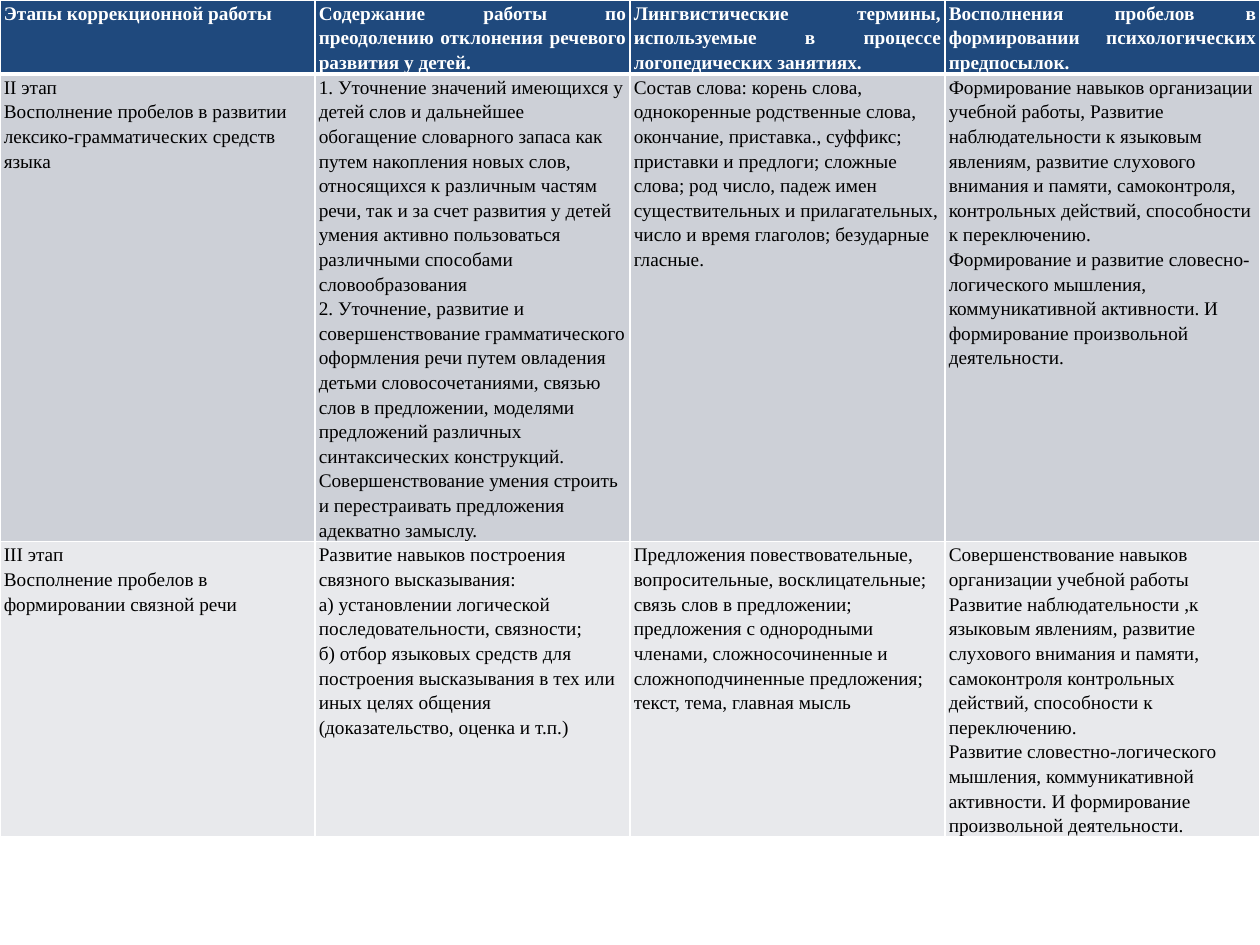
from dataclasses import dataclass

from lxml import etree
from pptx import Presentation
from pptx.dml.color import RGBColor
from pptx.enum.text import PP_ALIGN
from pptx.oxml.ns import qn
from pptx.util import Inches, Pt

JUST, LEFT = PP_ALIGN.JUSTIFY, PP_ALIGN.LEFT
WIDE, HIGH = Inches(10), Inches(7.5)
BLANK = 6


@dataclass(frozen=True)
class Theme:
    font: str = "Times New Roman"
    size: float = 11
    lead: float = 1.15
    pad: float = 0.03
    rule: str = "FFFFFF"
    thin: float = 1
    thick: float = 3


@dataclass(frozen=True)
class Row:
    share: float  # of the slide height
    fill: str
    ink: str
    cells: tuple[tuple[str, ...], ...]
    head: bool = False


THEME = Theme()

ROWS = (
    Row(0.077, "1F497D", "FFFFFF", (
        ("Этапы коррекционной работы",),
        ("Содержание работы по преодолению отклонения речевого развития у детей.",),
        ("Лингвистические термины, используемые в процессе логопедических занятиях.",),
        ("Восполнения пробелов в формировании психологических предпосылок.",),
    ), head=True),
    Row(0.495, "CDD0D7", "000000", (
        ("II этап",
         "Восполнение пробелов в развитии лексико-грамматических средств языка"),
        ("1. Уточнение значений имеющихся у детей слов и дальнейшее обогащение "
         "словарного запаса как путем накопления новых слов, относящихся к "
         "различным частям речи, так и за счет развития у детей умения активно "
         "пользоваться различными способами словообразования",
         "2. Уточнение, развитие и совершенствование грамматического оформления "
         "речи путем овладения детьми словосочетаниями, связью слов в "
         "предложении, моделями предложений различных синтаксических "
         "конструкций. Совершенствование умения строить и перестраивать "
         "предложения адекватно замыслу."),
        ("Состав слова: корень слова, однокоренные родственные слова, окончание, "
         "приставка., суффикс; приставки и предлоги; сложные слова; род число, "
         "падеж имен существительных и прилагательных, число и время глаголов; "
         "безударные гласные.",),
        ("Формирование навыков организации учебной работы, Развитие "
         "наблюдательности к языковым явлениям, развитие слухового внимания и "
         "памяти, самоконтроля, контрольных действий, способности к переключению.",
         "Формирование и развитие словесно-логического мышления, коммуникативной "
         "активности. И формирование произвольной деятельности."),
    )),
    Row(0.312, "E8E9EC", "000000", (
        ("III этап",
         "Восполнение пробелов в формировании связной речи"),
        ("Развитие навыков построения связного высказывания:",
         "а) установлении логической последовательности, связности;",
         "б) отбор языковых средств для построения высказывания в тех или иных "
         "целях общения (доказательство, оценка и т.п.)"),
        ("Предложения повествовательные, вопросительные, восклицательные; связь "
         "слов в предложении; предложения с однородными членами, "
         "сложносочиненные и сложноподчиненные предложения; текст, тема, "
         "главная мысль",),
        ("Совершенствование навыков организации учебной работы",
         "Развитие наблюдательности ,к языковым явлениям, развитие слухового "
         "внимания и памяти, самоконтроля контрольных действий, способности к "
         "переключению.",
         "Развитие словестно-логического мышления, коммуникативной активности. "
         "И формирование произвольной деятельности."),
    )),
)


def set_rules(cell, top: float, base: float) -> None:
    """Draw the four borders; they must precede the fill in the cell's XML."""
    props = cell._tc.get_or_add_tcPr()
    sides = {"lnL": THEME.thin, "lnR": THEME.thin, "lnT": top, "lnB": base}
    for spot, (side, width) in enumerate(sides.items()):
        line = etree.Element(qn(f"a:{side}"), w=str(Pt(width)))
        fill = etree.SubElement(line, qn("a:solidFill"))
        etree.SubElement(fill, qn("a:srgbClr"), val=THEME.rule)
        props.insert(spot, line)


def fill_cell(cell, row: Row, paras: tuple[str, ...]) -> None:
    cell.margin_left = cell.margin_right = Inches(THEME.pad)
    cell.margin_top = cell.margin_bottom = 0
    cell.fill.solid()
    cell.fill.fore_color.rgb = RGBColor.from_string(row.fill)
    cell.text_frame.text = "\n".join(paras)
    for para in cell.text_frame.paragraphs:
        para.alignment = JUST if row.head else LEFT
        para.line_spacing = THEME.lead
        for run in para.runs:
            font = run.font
            font.name, font.size, font.bold = THEME.font, Pt(THEME.size), row.head
            font.color.rgb = RGBColor.from_string(row.ink)


def draw_table(slide, rows: tuple[Row, ...]) -> None:
    cols = len(rows[0].cells)
    high = int(HIGH * sum(row.share for row in rows))
    table = slide.shapes.add_table(len(rows), cols, 0, 0, WIDE, high).table
    for r, row in enumerate(rows):
        table.rows[r].height = int(HIGH * row.share)
        top = THEME.thick if r and rows[r - 1].head else THEME.thin
        base = THEME.thick if row.head else THEME.thin
        for c, paras in enumerate(row.cells):
            cell = table.cell(r, c)
            fill_cell(cell, row, paras)
            set_rules(cell, top, base)


def main() -> None:
    deck = Presentation()
    deck.slide_width, deck.slide_height = WIDE, HIGH
    slide = deck.slides.add_slide(deck.slide_layouts[BLANK])
    draw_table(slide, ROWS)
    deck.save("out.pptx")


if __name__ == "__main__":
    main()
